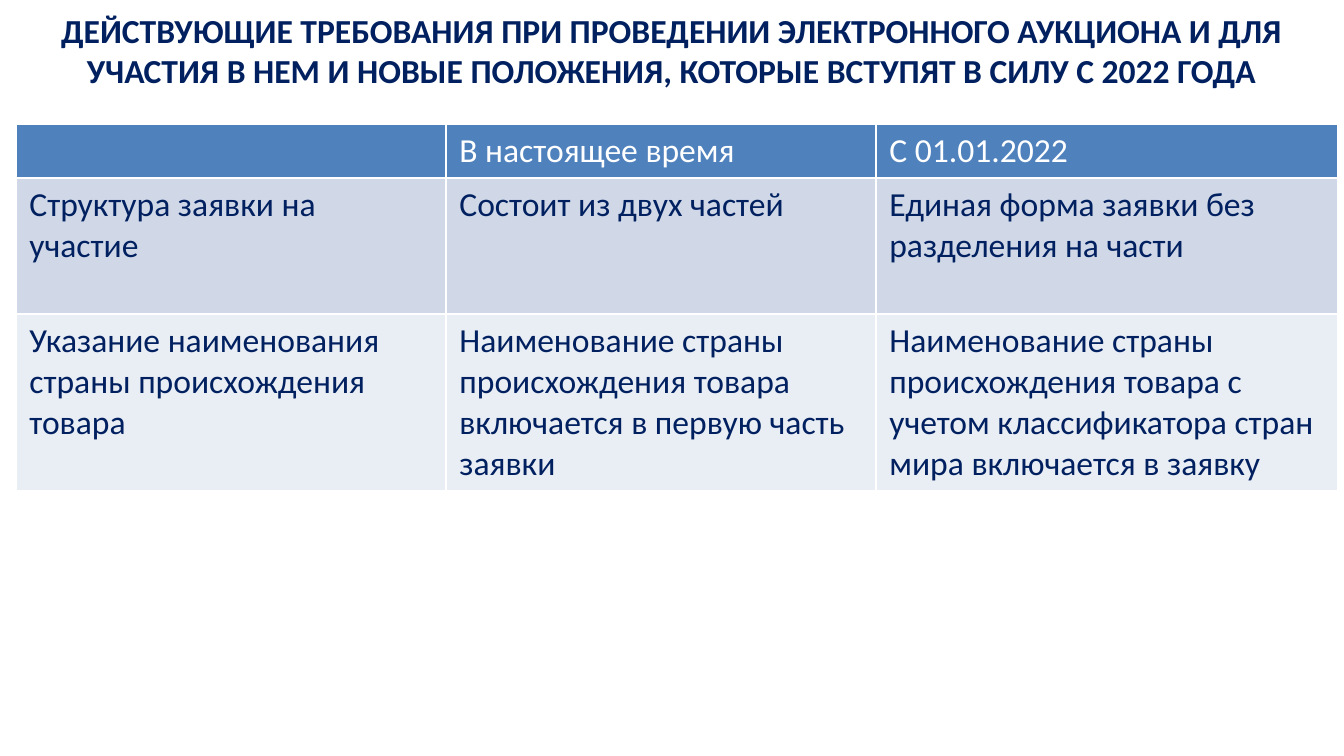
from lxml.etree import SubElement
from pptx import Presentation
from pptx.dml.color import RGBColor
from pptx.enum.text import MSO_ANCHOR, PP_ALIGN
from pptx.oxml.ns import qn
from pptx.util import Emu, Pt

SCALE = 914400 / 134.4
NAVY = RGBColor(0x00, 0x20, 0x60)
WHITE = RGBColor(0xFF, 0xFF, 0xFF)
HEADER_BLUE = RGBColor(0x4F, 0x81, 0xBD)
BAND_DARK = RGBColor(0xD0, 0xD8, 0xE8)
BAND_LIGHT = RGBColor(0xE9, 0xED, 0xF4)


def px(length):
    return Emu(round(length * SCALE))


def style_font(paragraph, color, bold):
    paragraph.font.name = "Calibri"
    paragraph.font.size = Pt(18)
    paragraph.font.bold = bold
    paragraph.font.color.rgb = color


presentation = Presentation()
presentation.slide_width = px(1344)
presentation.slide_height = px(756)
slide = presentation.slides.add_slide(presentation.slide_layouts[6])

# Title
title = slide.shapes.add_textbox(px(0), px(3), px(1344), px(110))
title.text_frame.word_wrap = True
title.text_frame.vertical_anchor = MSO_ANCHOR.TOP
paragraph = title.text_frame.paragraphs[0]
paragraph.text = (
    "ДЕЙСТВУЮЩИЕ ТРЕБОВАНИЯ ПРИ ПРОВЕДЕНИИ ЭЛЕКТРОННОГО АУКЦИОНА И ДЛЯ "
    "УЧАСТИЯ В НЕМ И НОВЫЕ ПОЛОЖЕНИЯ, КОТОРЫЕ ВСТУПЯТ В СИЛУ С 2022 ГОДА"
)
paragraph.alignment = PP_ALIGN.CENTER
style_font(paragraph, NAVY, True)

# Comparison table: height, fill, text colour and cell texts of each row
column_widths = [430, 430, 462]
rows = [
    (54, HEADER_BLUE, WHITE, ["", "В настоящее время", "С 01.01.2022"]),
    (136, BAND_DARK, NAVY, [
        "Структура заявки на участие",
        "Состоит из двух частей",
        "Единая форма заявки без разделения на части",
    ]),
    (177, BAND_LIGHT, NAVY, [
        "Указание наименования страны происхождения товара",
        "Наименование страны происхождения товара включается в первую часть заявки",
        "Наименование страны происхождения товара с учетом классификатора стран "
        "мира включается в заявку",
    ]),
]
table = slide.shapes.add_table(
    len(rows), len(column_widths), px(16), px(124),
    px(sum(column_widths)), px(sum(row[0] for row in rows)),
).table
for column, width in zip(table.columns, column_widths):
    column.width = px(width)

for row_index, (height, fill_color, text_color, texts) in enumerate(rows):
    table.rows[row_index].height = px(height)
    for column_index, text in enumerate(texts):
        cell = table.cell(row_index, column_index)
        cell.text = text
        style_font(cell.text_frame.paragraphs[0], text_color, False)

        # White borders precede the fill in the cell properties
        properties = cell._tc.get_or_add_tcPr()
        for side in ("lnL", "lnR", "lnT", "lnB"):
            line = SubElement(properties, qn(f"a:{side}"), w=str(Pt(1)))
            line_fill = SubElement(line, qn("a:solidFill"))
            SubElement(line_fill, qn("a:srgbClr"), val=str(WHITE))
        cell.fill.solid()
        cell.fill.fore_color.rgb = fill_color

presentation.save("out.pptx")
